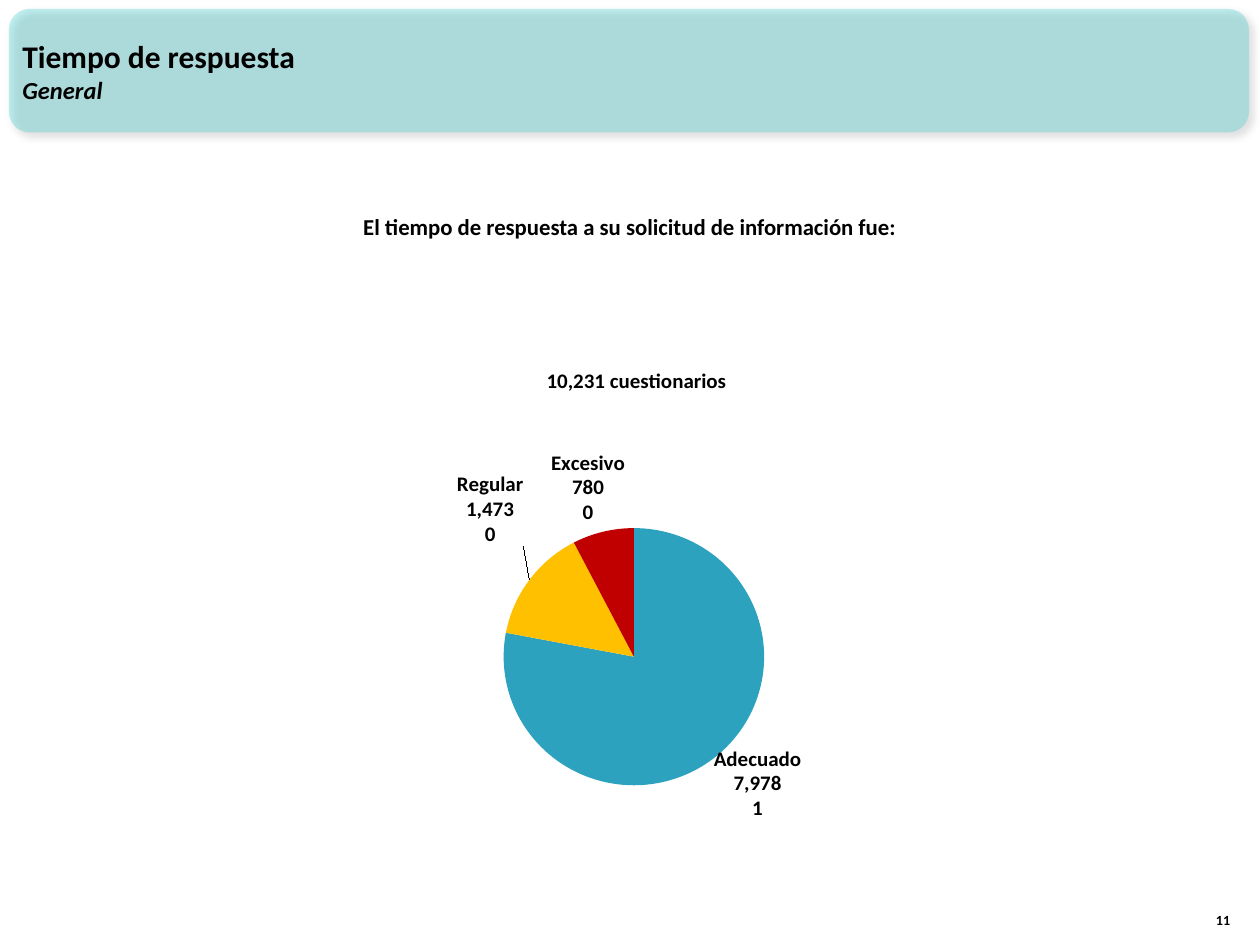
from lxml import etree
from pptx import Presentation
from pptx import util as u
from pptx.chart.data import CategoryChartData
from pptx.dml.color import RGBColor
from pptx.enum import chart as charts, shapes, text
from pptx.oxml import parse_xml
from pptx.oxml.ns import nsdecls, qn

FONT = "Calibri"
COLORS = {
    "banner": "33CCCC",
    "text": "000000",
    "Adecuado": "2DA2BF",
    "Regular": "FFC000",
    "Excesivo": "C00000",
}
ANSWERS = {"Adecuado": 7978, "Regular": 1473, "Excesivo": 780}
LABEL_SHIFTS = [(-0.01, -0.03), (0, -0.06), (0.03, 0)]


def color(name):
    return RGBColor.from_string(COLORS[name])


def style_font(font, size, italic=None):
    font.name = FONT
    font.size = u.Pt(size)
    font.bold = True
    font.italic = italic
    font.color.rgb = color("text")


def add_banner(page, left, top, width, height):
    banner = page.shapes.add_shape(
        shapes.MSO_SHAPE.ROUNDED_RECTANGLE,
        u.Cm(left), u.Cm(top), u.Cm(width), u.Cm(height))
    banner.fill.solid()
    banner.fill.fore_color.rgb = color("banner")
    banner.line.fill.background()
    properties = banner._element.spPr
    fill = properties.find(qn("a:solidFill"))
    etree.SubElement(fill[0], qn("a:alpha"), val="30000")
    properties.append(parse_xml(
        f'<a:effectLst {nsdecls("a")}>'
        '<a:outerShdw blurRad="50800" dist="38100" dir="2700000" algn="tl" rotWithShape="0">'
        '<a:srgbClr val="000000"><a:alpha val="40000"/></a:srgbClr>'
        '</a:outerShdw></a:effectLst>'))


def add_text(page, position, lines, align, anchor):
    box = page.shapes.add_textbox(*(u.Cm(length) for length in position))
    frame = box.text_frame
    frame.word_wrap = True
    frame.vertical_anchor = anchor
    for index, (words, size, italic) in enumerate(lines):
        para = frame.paragraphs[0] if index == 0 else frame.add_paragraph()
        para.alignment = align
        span = para.add_run()
        span.text = words
        style_font(span.font, size, italic)


def manual_layout(x, y, edge=False):
    modes = '<c:xMode val="edge"/><c:yMode val="edge"/>' if edge else ""
    return (f'<c:layout {nsdecls("c")}><c:manualLayout>{modes}'
            f'<c:x val="{x}"/><c:y val="{y}"/></c:manualLayout></c:layout>')


def add_labels(series):
    number_format = '<c:numFmt formatCode="#,##0" sourceLinked="0"/>'
    content = ('<c:dLblPos val="outEnd"/><c:showLegendKey val="0"/><c:showVal val="1"/>'
               '<c:showCatName val="1"/><c:showSerName val="0"/><c:showPercent val="1"/>'
               '<c:showBubbleSize val="0"/><c:separator>\n</c:separator>')
    labels = "".join(
        f'<c:dLbl><c:idx val="{index}"/>{manual_layout(*shift)}{number_format}{content}</c:dLbl>'
        for index, shift in enumerate(LABEL_SHIFTS))
    series.find(qn("c:cat")).addprevious(parse_xml(
        f'<c:dLbls {nsdecls("c")}>{labels}{number_format}{content}'
        '<c:showLeaderLines val="1"/></c:dLbls>'))


def place_plot(chart):
    area = chart.element.find(".//" + qn("c:plotArea"))
    for old in area.findall(qn("c:layout")):
        area.remove(old)
    layout = parse_xml(manual_layout(0.23, 0.38, edge=True))
    manual = layout[0]
    target = etree.Element(qn("c:layoutTarget"), val="inner")
    manual.insert(0, target)
    etree.SubElement(manual, qn("c:w"), val="0.55")
    etree.SubElement(manual, qn("c:h"), val="0.53")
    area.insert(0, layout)


def add_title(chart, words):
    chart.has_title = True
    span = chart.chart_title.text_frame.paragraphs[0].add_run()
    span.text = words
    style_font(span.font, 12)
    title = chart.element.find(".//" + qn("c:title"))
    for old in title.findall(qn("c:layout")):
        title.remove(old)
    title.find(qn("c:tx")).addnext(parse_xml(manual_layout(0.39, 0.04, edge=True)))
    chart.chart_title.include_in_layout = True


def add_pie(page, left, top, width, height):
    data = CategoryChartData(number_format="#,##0")
    data.categories = list(ANSWERS)
    name = f"{sum(ANSWERS.values()):,} cuestionarios"
    data.add_series(name, list(ANSWERS.values()))
    chart = page.shapes.add_chart(
        charts.XL_CHART_TYPE.PIE,
        u.Cm(left), u.Cm(top), u.Cm(width), u.Cm(height), data).chart
    style_font(chart.font, 12)
    chart.has_legend = False
    plot = chart.plots[0]
    plot.vary_by_categories = True
    series = plot.series[0]
    for index, answer in enumerate(ANSWERS):
        fill = series.points[index].format.fill
        fill.solid()
        fill.fore_color.rgb = color(answer)
    add_labels(chart.element.find(".//" + qn("c:ser")))
    add_title(chart, name)
    place_plot(chart)


def main():
    deck = Presentation()
    deck.slide_width, deck.slide_height = u.Cm(25.4), u.Cm(19.05)
    page = deck.slides.add_slide(deck.slide_layouts[6])
    align, anchor = text.PP_ALIGN, text.MSO_ANCHOR
    add_banner(page, 0.18, 0.18, 25, 2.49)
    add_text(page, (24.03, 17.81, 1.02, 1.02), [("11", 8, None)],
             align.RIGHT, anchor.BOTTOM)
    add_pie(page, 4.7, 6.93, 16, 9.91)
    add_text(page, (2.26, 4.17, 20.85, 0.81),
             [("El tiempo de respuesta a su solicitud de información fue:", 13, None)],
             align.CENTER, anchor.TOP)
    add_text(page, (0.2, 0.23, 23.29, 2.39),
             [("Tiempo de respuesta", 18, None), ("General", 14, True)],
             align.LEFT, anchor.MIDDLE)
    deck.save("out.pptx")


if __name__ == "__main__":
    main()
